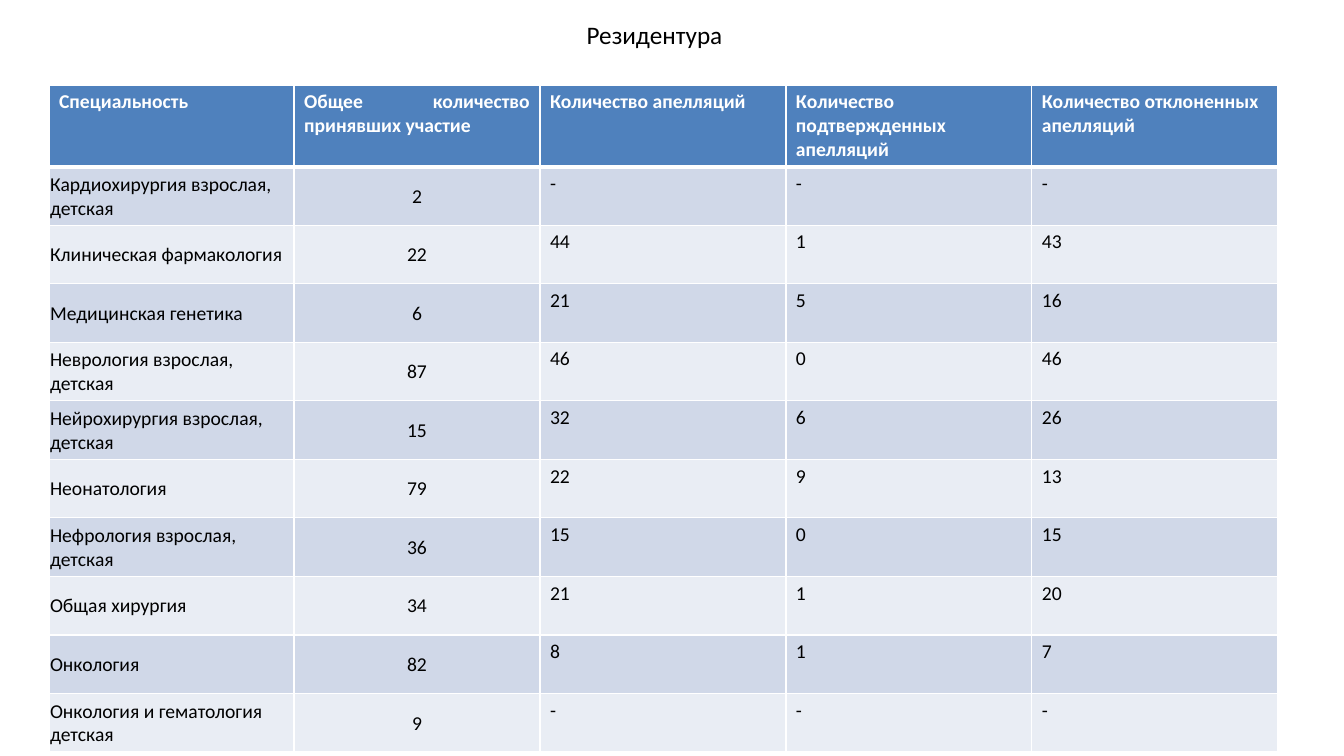
from lxml import etree
from pptx import Presentation
from pptx import util as u
from pptx.dml.color import RGBColor
from pptx.enum import text
from pptx.oxml import ns

LEFT, CENTER, JUSTIFY = (text.PP_ALIGN.LEFT, text.PP_ALIGN.CENTER,
                         text.PP_ALIGN.JUSTIFY)
TOP, MIDDLE = text.MSO_ANCHOR.TOP, text.MSO_ANCHOR.MIDDLE

HEADINGS = ["Специальность", "Общее количество принявших участие",
            "Количество апелляций", "Количество подтвержденных апелляций",
            "Количество отклоненных апелляций"]
SPECIALTIES = [
    ("Кардиохирургия взрослая, детская", "2", "-", "-", "-"),
    ("Клиническая фармакология", "22", "44", "1", "43"),
    ("Медицинская генетика", "6", "21", "5", "16"),
    ("Неврология взрослая, детская", "87", "46", "0", "46"),
    ("Нейрохирургия взрослая, детская", "15", "32", "6", "26"),
    ("Неонатология", "79", "22", "9", "13"),
    ("Нефрология взрослая, детская", "36", "15", "0", "15"),
    ("Общая хирургия", "34", "21", "1", "20"),
    ("Онкология", "82", "8", "1", "7"),
    ("Онкология и гематология детская", "9", "-", "-", "-"),
]


def px(count):
    return u.Emu(round(count * 914400 / 100.8))


def color(hex_value):
    return RGBColor.from_string(hex_value)


def write(frame, words, size=14, ink="000000", bold=False, align=LEFT,
          font="Calibri"):
    frame.text = words
    paragraph = frame.paragraphs[0]
    paragraph.alignment = align
    run_font = paragraph.runs[0].font
    run_font.name, run_font.size, run_font.bold = font, u.Pt(size), bold
    run_font.color.rgb = color(ink)


class ResidencySlide:
    header_fill = "4F81BD"
    bands = ("D0D8E8", "E9EDF4")
    rule = "FFFFFF"

    def __init__(self, deck):
        self.slide = deck.slides.add_slide(deck.slide_layouts[5])

    def title(self, words, left, top, width, height):
        heading = self.slide.shapes.title
        heading.left, heading.top = px(left), px(top)
        heading.width, heading.height = px(width), px(height)
        frame = heading.text_frame
        frame.word_wrap = True
        frame.auto_size = text.MSO_AUTO_SIZE.NONE
        frame.vertical_anchor = TOP
        write(frame, words, size=18, align=CENTER)

    def borders(self, cell, **widths):
        properties = cell._tc.get_or_add_tcPr()
        for side in ("lnL", "lnR", "lnT", "lnB"):
            line = etree.SubElement(properties, ns.qn(f"a:{side}"),
                                    w=str(u.Pt(widths.get(side, 1))))
            fill = etree.SubElement(line, ns.qn("a:solidFill"))
            etree.SubElement(fill, ns.qn("a:srgbClr"), val=self.rule)

    def cell(self, cell, words, fill, borders, tight=False, **style):
        self.borders(cell, **borders)
        cell.fill.solid()
        cell.fill.fore_color.rgb = color(fill)
        if tight:
            cell.margin_left = cell.margin_right = cell.margin_top = px(1)
            cell.margin_bottom = 0
            cell.vertical_anchor = MIDDLE
        write(cell.text_frame, words, **style)

    def table(self, headings, rows, left, top, widths, height):
        grid = self.slide.shapes.add_table(
            len(rows) + 1, len(headings), px(left), px(top),
            px(sum(widths)), px(height)).table
        for column, width in zip(grid.columns, widths):
            column.width = px(width)

        # Header row
        for c, words in enumerate(headings):
            self.cell(grid.cell(0, c), words, self.header_fill, {"lnB": 3},
                      ink="FFFFFF", bold=True,
                      align=JUSTIFY if c == 1 else LEFT)

        # Specialty rows, in alternating bands
        for r, row in enumerate(rows, start=1):
            borders = {"lnT": 3} if r == 1 else {}
            for c, words in enumerate(row):
                self.cell(grid.cell(r, c), words, self.bands[(r - 1) % 2],
                          borders, tight=c < 2,
                          align=CENTER if c == 1 else LEFT)


def main():
    deck = Presentation()
    deck.slide_width, deck.slide_height = px(1344), px(756)
    residency = ResidencySlide(deck)
    residency.title("Резидентура", 405, 14, 499, 40)
    residency.table(HEADINGS, SPECIALTIES, 49, 85, [245] + [246] * 4, 644)
    deck.save("out.pptx")


if __name__ == "__main__":
    main()
